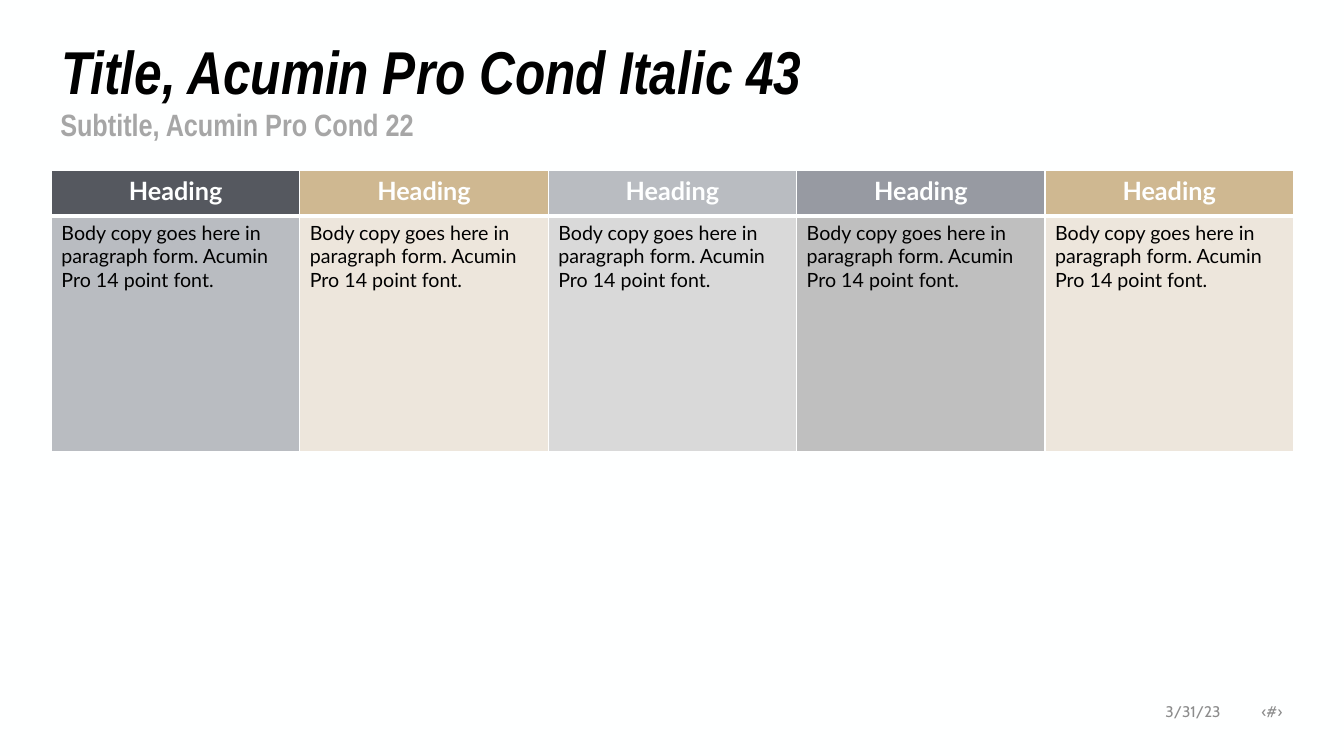
from lxml import etree
from pptx import Presentation
from pptx.dml.color import RGBColor
from pptx.enum import text as tx
from pptx.oxml import ns
from pptx.util import Inches, Pt

# Content
TITLE = "Title, Acumin Pro Cond Italic 43"
SUB = "Subtitle, Acumin Pro Cond 22"
FOOT = "\t3/31/23\t‹#›"
HEAD = "Heading"
BODY = "Body copy goes here in paragraph form. Acumin Pro 14 point font."
COLS = [  # heading fill, body fill
    ("55585F", "B9BCC1"),
    ("CFB891", "EDE6DC"),
    ("B9BCC1", "D9D9D9"),
    ("979AA2", "BFBFBF"),
    ("CFB891", "EDE6DC"),
]

# Theme: colours and type
THEME = {
    "paper": "FEFFFF",
    "title": dict(name="Arial Narrow", size=43.2, color="000000", bold=True, italic=True),
    "sub": dict(name="Arial Narrow", size=22, color="A6A6A6", bold=True),
    "head": dict(name="Lato", size=18, color="FEFFFF", bold=True),
    "body": dict(name="Lato", size=14, color="000000", bold=False),
    "foot": dict(name="Cabin", size=11, color="8C8C8C"),
}

# Layout in inches
LEFT, TOP, COL_W = 0.51, 1.69, 2.464
ROWS = [0.45, 2.34]
TABS = [(0.58, "l"), (1.74, "r")]
BOXES = [  # text, style, place, anchor, line spacing, tabs
    (TITLE, "title", (0.51, 0.42, 12.32, 0.64), "MIDDLE", 0.9, []),
    (SUB, "sub", (0.5, 1.04, 12.33, 0.4), "TOP", 0.9, []),
    (FOOT, "foot", (10.88, 6.88, 1.95, 0.35), "MIDDLE", 1.0, TABS),
]


def style(font, key):
    for attr, val in THEME[key].items():
        if attr == "color":
            font.color.rgb = RGBColor.from_string(val)
        else:
            setattr(font, attr, Pt(val) if attr == "size" else val)


def add_tabs(para, stops):
    props = para._p.get_or_add_pPr()
    tabs = etree.SubElement(props, ns.qn("a:tabLst"))
    for pos, side in stops:
        etree.SubElement(tabs, ns.qn("a:tab"), pos=str(Inches(pos)), algn=side)


def add_text(slide, words, key, place, anchor, space, stops):
    frame = slide.shapes.add_textbox(*map(Inches, place)).text_frame
    frame.word_wrap = True
    frame.vertical_anchor = tx.MSO_ANCHOR[anchor]
    para = frame.paragraphs[0]
    para.line_spacing = space
    if stops:
        add_tabs(para, stops)
    run = para.add_run()
    run.text = words
    style(run.font, key)


def add_edges(cell, base):
    props = cell._tc.get_or_add_tcPr()
    for side, width in zip("LRTB", (1, 1, 1, base)):
        line = etree.SubElement(props, ns.qn(f"a:ln{side}"), w=str(Pt(width)))
        fill = etree.SubElement(line, ns.qn("a:solidFill"))
        etree.SubElement(fill, ns.qn("a:srgbClr"), val=THEME["paper"])


def fill_cell(cell, words, key, color, align, base):
    add_edges(cell, base)
    cell.fill.solid()
    cell.fill.fore_color.rgb = RGBColor.from_string(color)
    para = cell.text_frame.paragraphs[0]
    para.alignment = align
    run = para.add_run()
    run.text = words
    style(run.font, key)


def add_grid(slide):
    size = (LEFT, TOP, COL_W * len(COLS), sum(ROWS))
    grid = slide.shapes.add_table(len(ROWS), len(COLS), *map(Inches, size)).table
    grid.first_row = grid.horz_banding = False
    for row, high in zip(grid.rows, ROWS):
        row.height = Inches(high)
    for i, (dark, light) in enumerate(COLS):
        grid.columns[i].width = Inches(COL_W)
        fill_cell(grid.cell(0, i), HEAD, "head", dark, tx.PP_ALIGN.CENTER, 3)
        fill_cell(grid.cell(1, i), BODY, "body", light, tx.PP_ALIGN.LEFT, 1)


def main():
    deck = Presentation()
    deck.slide_width, deck.slide_height = Inches(13.33), Inches(7.5)
    slide = deck.slides.add_slide(deck.slide_layouts[6])
    back = slide.background.fill
    back.solid()
    back.fore_color.rgb = RGBColor.from_string(THEME["paper"])

    # Table, then title, subtitle and footer
    add_grid(slide)
    for box in BOXES:
        add_text(slide, *box)
    deck.save("out.pptx")


if __name__ == "__main__":
    main()
